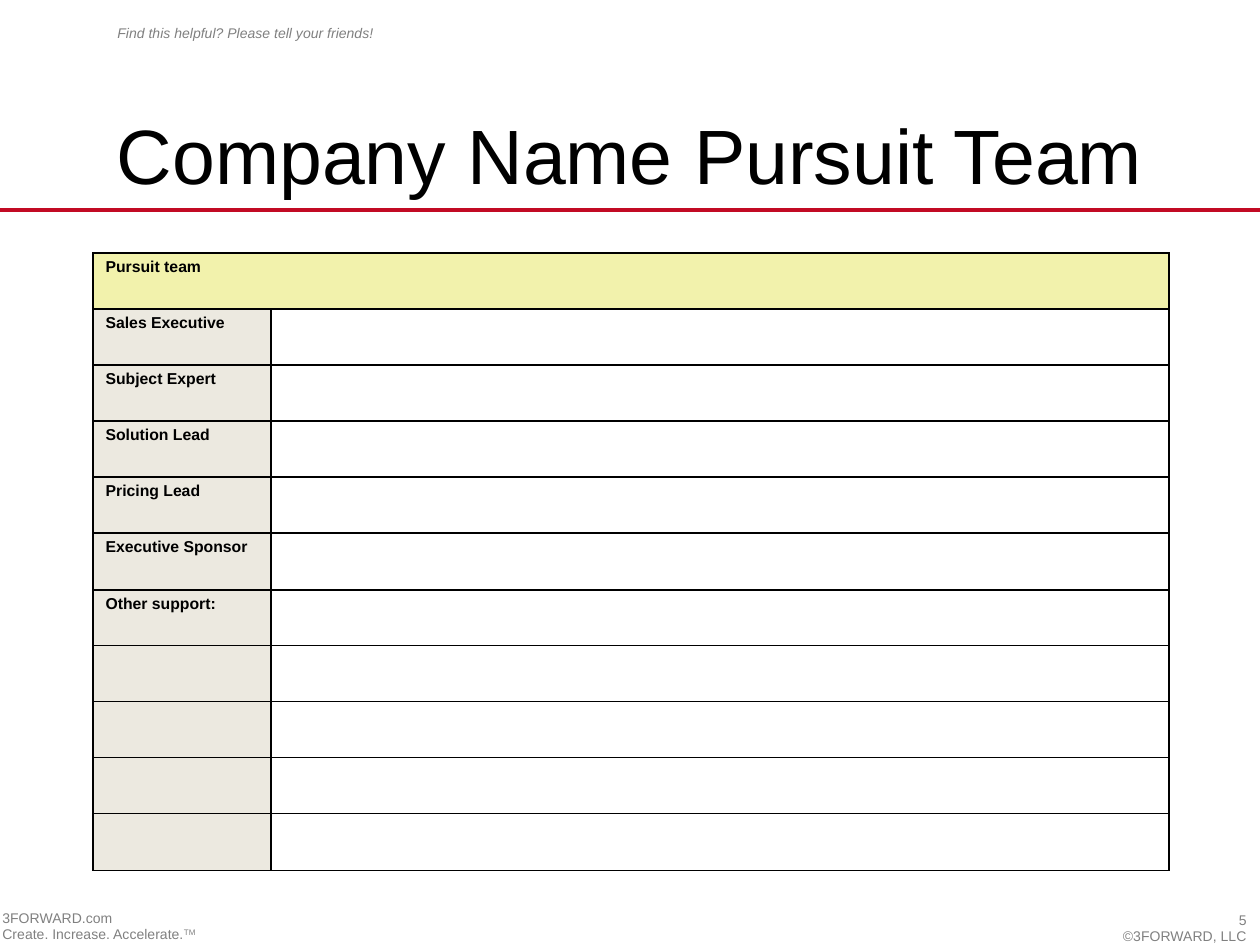
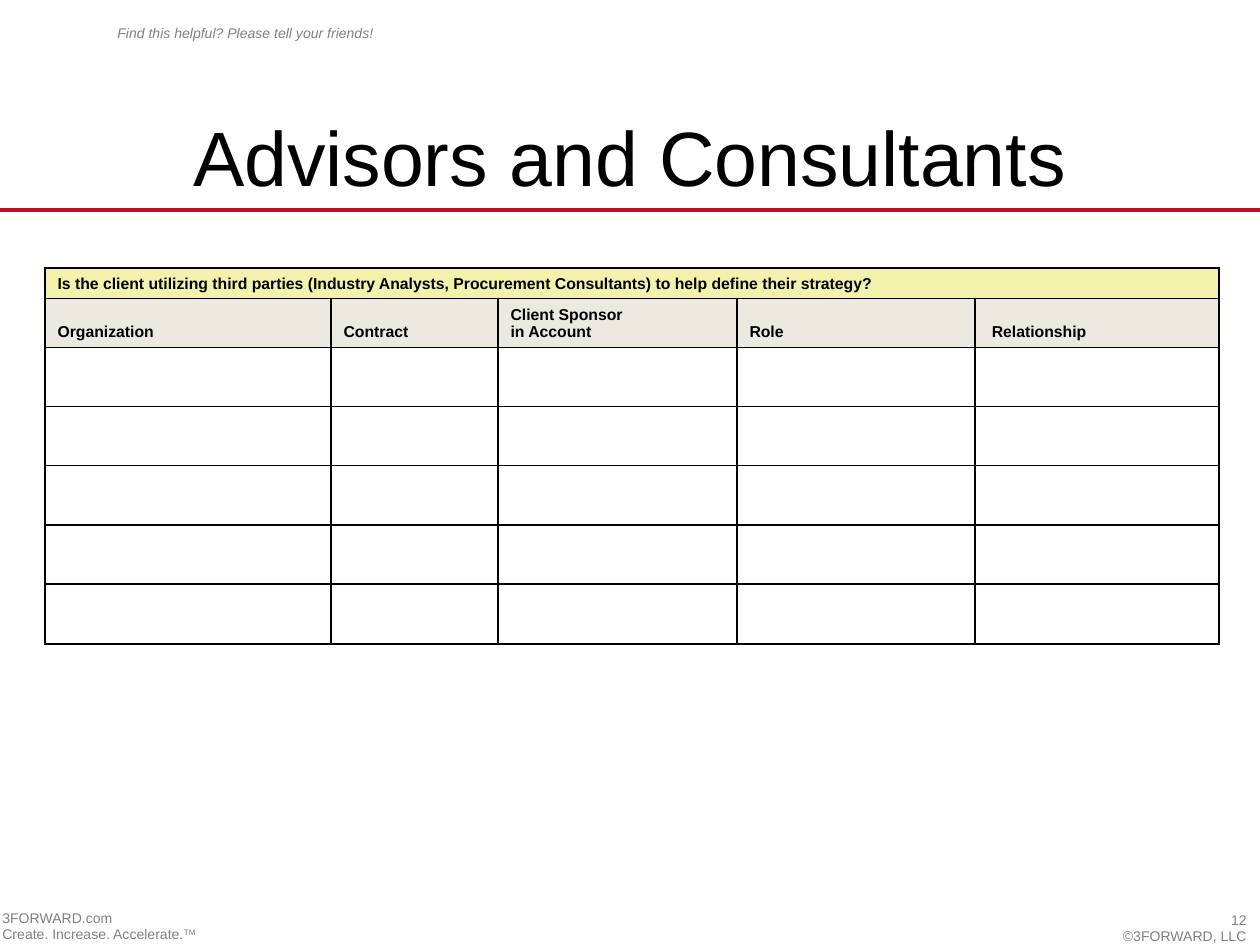
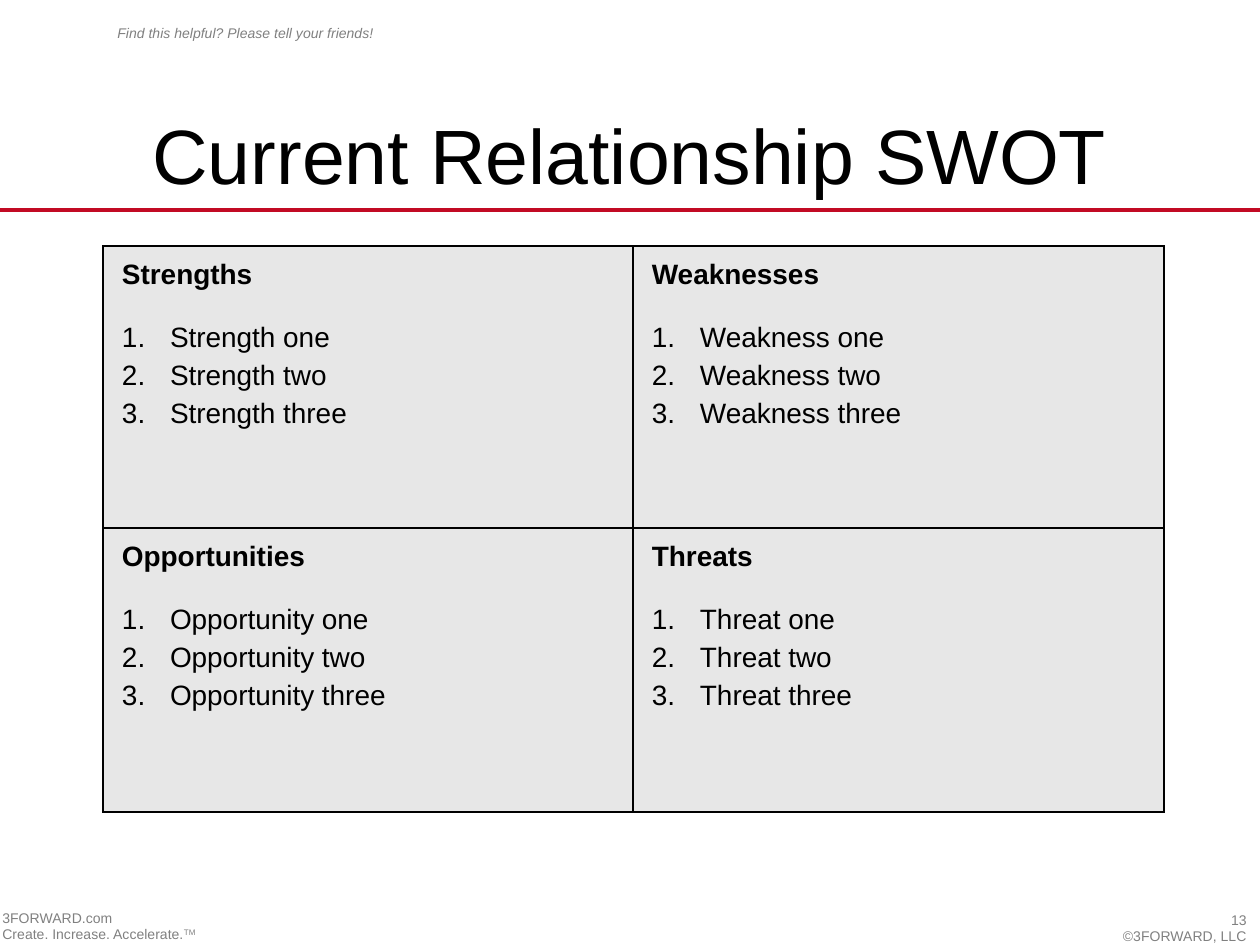
from itertools import pairwise

from lxml import etree
from pptx import Presentation, util as u
from pptx.dml.color import RGBColor
from pptx.enum import text
from pptx.oxml import parse_xml
from pptx.oxml.ns import nsdecls, qn

PX = 914400 // 126
FONT = "Arial"
BLACK, GREY, RED = "000000", "808080", "C20A24"
WHITE, YELLOW, BEIGE, SILVER = "FFFFFF", "F2F2AC", "ECE9E0", "E7E7E7"
LEFT, CENTER, RIGHT = text.PP_ALIGN.LEFT, text.PP_ALIGN.CENTER, text.PP_ALIGN.RIGHT
TOP, MIDDLE, BOTTOM = text.MSO_ANCHOR.TOP, text.MSO_ANCHOR.MIDDLE, text.MSO_ANCHOR.BOTTOM


def style(paragraph, size, color, bold=False, italic=False):
    font = paragraph.font
    font.name, font.size, font.bold, font.italic = FONT, u.Pt(size), bold, italic
    font.color.rgb = RGBColor.from_string(color)


def add_grid(slide, column_edges, row_edges, fills):
    left, top = column_edges[0], row_edges[0]
    table = slide.shapes.add_table(
        len(row_edges) - 1, len(column_edges) - 1, left * PX, top * PX,
        (column_edges[-1] - left) * PX, (row_edges[-1] - top) * PX).table
    table.first_row = table.horz_banding = False
    for column, (start, end) in zip(table.columns, pairwise(column_edges)):
        column.width = (end - start) * PX
    for row, (start, end) in zip(table.rows, pairwise(row_edges)):
        row.height = (end - start) * PX
    for cell, fill in zip(table.iter_cells(), fills):
        properties = cell._tc.get_or_add_tcPr()
        for side in ("lnL", "lnR", "lnT", "lnB"):
            properties.append(parse_xml(
                f'<a:{side} {nsdecls("a")} w="12700"><a:solidFill>'
                f'<a:srgbClr val="{BLACK}"/></a:solidFill></a:{side}>'))
        cell.fill.solid()
        cell.fill.fore_color.rgb = RGBColor.from_string(fill)
    return table


presentation = Presentation()
presentation.slide_width, presentation.slide_height = u.Inches(10), u.Inches(7.5)

slides = []
for title, title_top, title_height, number in [
    ("Company Name Pursuit Team", 98, 111, "5"),
    ("Advisors and Consultants", 102, 108, "12"),
    ("Current Relationship SWOT", 98, 111, "13"),
]:
    slide = presentation.slides.add_slide(presentation.slide_layouts[6])
    slides.append(slide)
    rule = slide.shapes.add_connector(1, 0, 210 * PX, presentation.slide_width, 210 * PX)
    rule.line.color.rgb = RGBColor.from_string(RED)
    rule.line.width = u.Pt(2.25)
    etree.SubElement(rule._element.spPr, qn("a:effectLst"))

    for left, top, width, height, words, size, color, align, anchor, italic in [
        (105, 18, 388, 30, "Find this helpful? Please tell your friends!",
         8, GREY, LEFT, TOP, True),
        (63, title_top, 1134, title_height, title, 44, BLACK, CENTER, MIDDLE, False),
        (965, 905, 294, 40, f"{number}\n©3FORWARD, LLC", 8, GREY, RIGHT, TOP, False),
        (-10, 903, 462, 47, "3FORWARD.com\nCreate. Increase. Accelerate.",
         8, GREY, LEFT, TOP, False),
    ]:
        frame = slide.shapes.add_textbox(left * PX, top * PX, width * PX, height * PX).text_frame
        frame.word_wrap = True
        frame.vertical_anchor = anchor
        frame.text = words
        for paragraph in frame.paragraphs:
            paragraph.alignment = align
            style(paragraph, size, color, italic=italic)
    trademark = frame.paragraphs[-1].add_run()
    trademark.text = "TM"
    trademark.font._element.set("baseline", "30000")

team_slide, advisors_slide, swot_slide = slides

roles = ["Pursuit team", "Sales Executive", "Subject Expert", "Solution Lead",
         "Pricing Lead", "Executive Sponsor", "Other support:"]
team_table = add_grid(
    team_slide, [93, 271, 1169], [253 + 618 * row // 11 for row in range(12)],
    [YELLOW] * 2 + [BEIGE, WHITE] * 10)
team_table.cell(0, 0).merge(team_table.cell(0, 1))
labels = [(team_table.cell(row, 0), role, TOP) for row, role in enumerate(roles)]

headings = ["Organization", "Contract", "Client Sponsor\vin Account", "Role", "Relationship"]
advisors_table = add_grid(
    advisors_slide, [45, 331, 498, 737, 975, 1219],
    [268, 298] + [344 + 297 * row // 5 for row in range(6)],
    [YELLOW] * 5 + [BEIGE] * 5 + [WHITE] * 25)
advisors_table.cell(0, 0).merge(advisors_table.cell(0, 4))
advisors_table.cell(1, 4).margin_left = 17 * PX
question = ("Is the client utilizing third parties (Industry Analysts, Procurement "
            "Consultants) to help define their strategy?")
labels.append((advisors_table.cell(0, 0), question, BOTTOM))
labels += [(advisors_table.cell(1, column), heading, BOTTOM)
           for column, heading in enumerate(headings)]

for cell, label, anchor in labels:
    cell.text = label
    cell.vertical_anchor = anchor
    paragraph = cell.text_frame.paragraphs[0]
    paragraph.line_spacing = 0.95
    style(paragraph, 9, BLACK, bold=True)

swot_table = add_grid(swot_slide, [103, 633, 1164], [246, 528, 812], [SILVER] * 4)
quadrants = [("Strengths", "Strength"), ("Weaknesses", "Weakness"),
             ("Opportunities", "Opportunity"), ("Threats", "Threat")]
for cell, (heading, item) in zip(swot_table.iter_cells(), quadrants):
    cell.margin_left = cell.margin_right = cell.margin_top = cell.margin_bottom = 19 * PX
    cell.text = "\n".join([heading] + [f"{item} {count}" for count in ("one", "two", "three")])
    for index, paragraph in enumerate(cell.text_frame.paragraphs):
        paragraph.line_spacing = 0.8
        paragraph.space_after = u.Emu((13 if index else 38) * PX)
        if index:
            properties = paragraph._p.get_or_add_pPr()
            properties.set("marL", str(48 * PX))
            properties.set("indent", str(-48 * PX))
            bullet_color = etree.SubElement(properties, qn("a:buClr"))
            etree.SubElement(bullet_color, qn("a:srgbClr"), val=BLACK)
            etree.SubElement(properties, qn("a:buAutoNum"), type="arabicPeriod")
        style(paragraph, 16, BLACK, bold=index == 0)

presentation.save("out.pptx")
